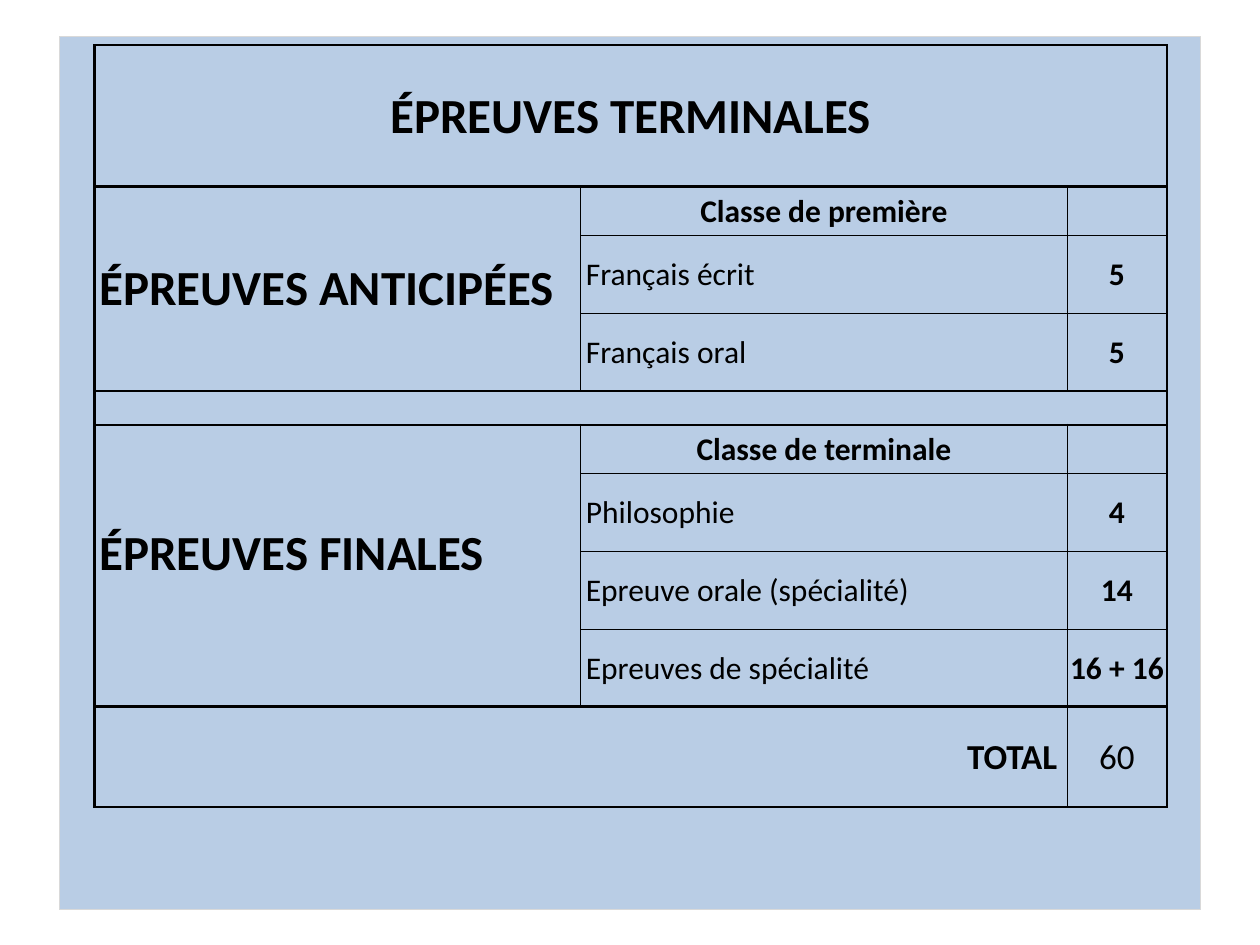
from dataclasses import dataclass

from lxml import etree
from pptx import Presentation
from pptx import util as u
from pptx.dml.color import RGBColor
from pptx.enum import shapes, text
from pptx.oxml.ns import qn


@dataclass(frozen=True)
class Theme:
    """Colours, type sizes and line widths of the slide."""
    font: str = "Calibri"
    ink: str = "000000"
    panel: str = "B9CDE5"
    panel_edge: str = "D9D9D9"
    heading: int = 28
    body: int = 18
    total: int = 20
    empty: int = 11
    thin: float = 0.5
    thick: float = 1.5
    plain_table: str = "{2D5ABB26-0587-4C30-8999-92F81FD0307C}"


@dataclass
class Entry:
    """Text of one table cell with its format and span."""
    words: str = ""
    size: int = 18
    bold: bool = False
    align: text.PP_ALIGN = text.PP_ALIGN.LEFT
    rows: int = 1
    columns: int = 1
    side: float = 0.04
    bottom: float = 0


class SlideBuilder:
    """Draws elements on a grid of 100 columns and 75 rows."""

    def __init__(self, presentation, theme):
        self.theme = theme
        self.slide = presentation.slides.add_slide(presentation.slide_layouts[6])
        self.column = presentation.slide_width / 100
        self.row = presentation.slide_height / 75

    def place(self, left, top, width, height):
        return (round(left * self.column), round(top * self.row),
                round(width * self.column), round(height * self.row))

    def panel(self, *box):
        shape = self.slide.shapes.add_shape(shapes.MSO_SHAPE.RECTANGLE, *self.place(*box))
        shape.shadow.inherit = False
        shape.fill.solid()
        shape.fill.fore_color.rgb = RGBColor.from_string(self.theme.panel)
        shape.line.color.rgb = RGBColor.from_string(self.theme.panel_edge)
        shape.line.width = u.Pt(0.75)

    def table(self, left, top, widths, heights, entries, breaks, open_edges):
        box = self.place(left, top, sum(widths), sum(heights))
        frame = self.slide.shapes.add_table(len(heights), len(widths), *box)
        table = frame.table
        table.first_row = table.horz_banding = False
        next(frame._element.iter(qn("a:tableStyleId"))).text = self.theme.plain_table
        for column, width in zip(table.columns, widths):
            column.width = round(width * self.column)
        for row, height in zip(table.rows, heights):
            row.height = round(height * self.row)
        for (row, column), entry in entries.items():
            if entry.rows * entry.columns > 1:
                table.cell(row, column).merge(
                    table.cell(row + entry.rows - 1, column + entry.columns - 1))
        for row in range(len(heights)):
            for column in range(len(widths)):
                cell = table.cell(row, column)
                entry = entries.get((row, column), Entry())
                if not cell.is_spanned:
                    right, bottom = column + entry.columns, row + entry.rows
                    outer = (0, len(widths))
                    self.borders(cell, {
                        "L": (column in outer, (row, column) in open_edges),
                        "R": (right in outer, (row, right) in open_edges),
                        "T": (row in breaks, False),
                        "B": (bottom in breaks, False)})
                cell.fill.background()
                self.label(cell, entry)

    def borders(self, cell, edges):
        properties = cell._tc.get_or_add_tcPr()
        for side, (thick, hidden) in edges.items():
            width = u.Pt(self.theme.thick if thick else self.theme.thin)
            line = etree.SubElement(properties, qn(f"a:ln{side}"), w=str(int(width)))
            if hidden:
                etree.SubElement(line, qn("a:noFill"))
            else:
                fill = etree.SubElement(line, qn("a:solidFill"))
                etree.SubElement(fill, qn("a:srgbClr"), val=self.theme.ink)

    def label(self, cell, entry):
        cell.vertical_anchor = text.MSO_ANCHOR.MIDDLE
        cell.margin_left = cell.margin_right = u.Inches(entry.side)
        cell.margin_top, cell.margin_bottom = u.Inches(0.01), u.Inches(entry.bottom)
        paragraph = cell.text_frame.paragraphs[0]
        paragraph.alignment = entry.align
        if not entry.words:
            etree.SubElement(paragraph._p, qn("a:endParaRPr"), sz=str(self.theme.empty * 100))
            return
        run = paragraph.add_run()
        run.text = entry.words
        run.font.name = self.theme.font
        run.font.size = u.Pt(entry.size)
        run.font.bold = entry.bold
        run.font.color.rgb = RGBColor.from_string(self.theme.ink)


def exam_entries(theme):
    """Return the table entries by row and column."""
    center, right = text.PP_ALIGN.CENTER, text.PP_ALIGN.RIGHT
    entries = {
        (0, 0): Entry("ÉPREUVES TERMINALES", theme.heading, True, center, columns=3, side=0.01),
        (4, 0): Entry(columns=3),
        (9, 1): Entry("TOTAL", theme.total, True, right, side=0.08),
        (9, 2): Entry("60", theme.total, False, center, side=0.01),
    }
    sections = [
        (1, "ÉPREUVES ANTICIPÉES", 0, "Classe de première",
         [("Français écrit", "5"), ("Français oral", "5")]),
        (5, "ÉPREUVES FINALES", 0.19, "Classe de terminale",
         [("Philosophie", "4"), ("Epreuve orale (spécialité)", "14"),
          ("Epreuves de spécialité", "16 + 16")]),
    ]
    for start, name, bottom, year, exams in sections:
        entries[start, 0] = Entry(name, theme.heading, True, rows=len(exams) + 1, bottom=bottom)
        entries[start, 1] = Entry(year, theme.body, True, center, side=0.01)
        for row, (exam, weight) in enumerate(exams, start + 1):
            entries[row, 1] = Entry(exam, theme.body)
            entries[row, 2] = Entry(weight, theme.body, True, center, side=0.01)
    return entries


def main():
    """Build and save the slide."""
    presentation = Presentation()
    presentation.slide_width, presentation.slide_height = u.Inches(10), u.Inches(7.5)
    theme = Theme()
    builder = SlideBuilder(presentation, theme)
    builder.panel(4.7, 2.9, 90.6, 69.3)
    heading, year, exam, gap, total = 11.2, 3.9, 6.16, 2.7, 8
    builder.table(
        7.5, 3.6, [38.6, 38.6, 7.9],
        [heading, year, exam, exam, gap, year, exam, exam, exam, total],
        exam_entries(theme), breaks={0, 1, 4, 5, 9, 10}, open_edges={(9, 1)})
    presentation.save("out.pptx")


if __name__ == "__main__":
    main()
